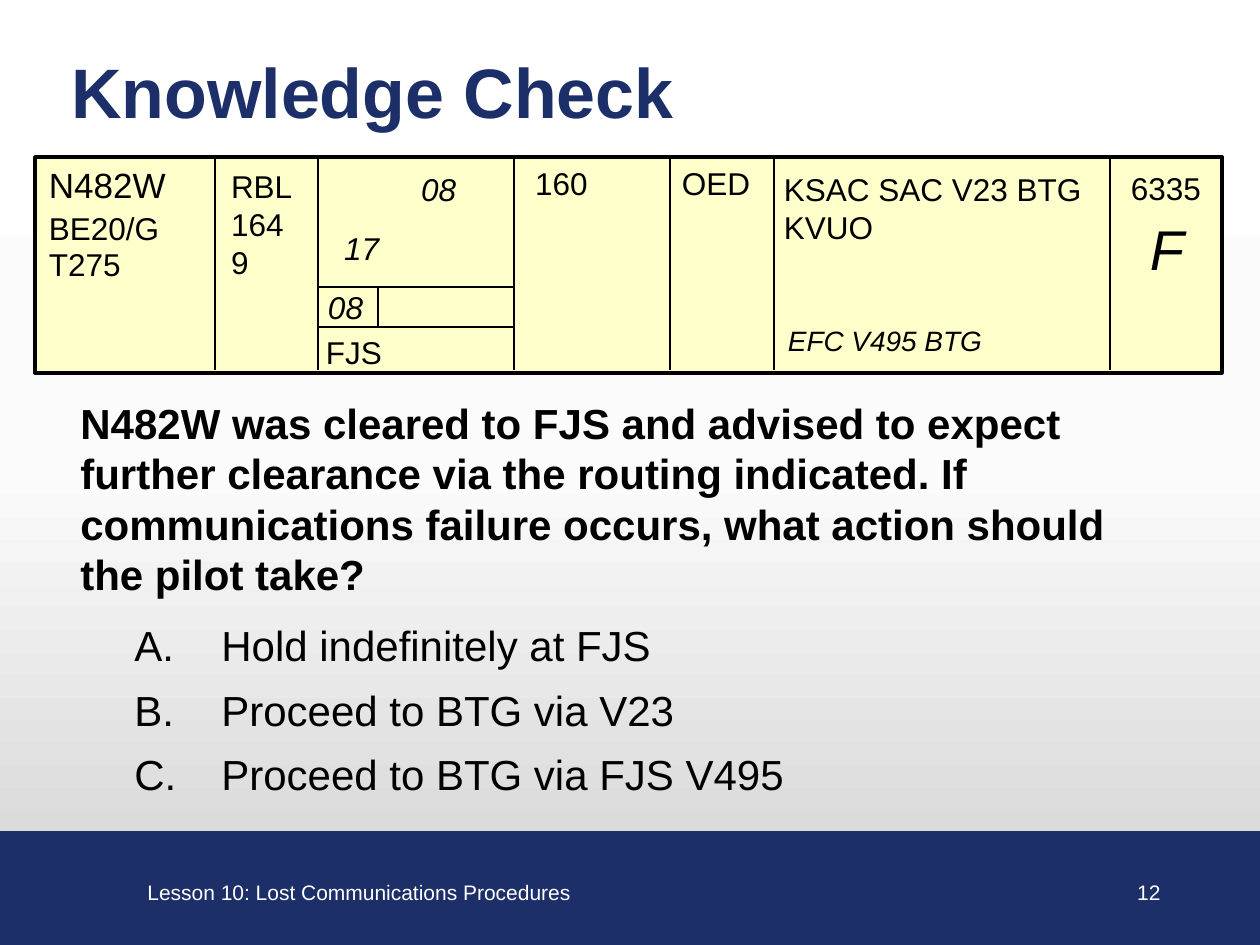
from copy import deepcopy
from dataclasses import dataclass

from lxml import etree
from pptx import Presentation
from pptx import util as u
from pptx.dml.color import RGBColor
from pptx.enum import shapes, text
from pptx.oxml.ns import qn

EMU_PER_PX = 914400 / 126


def px(n):
    return u.Emu(round(n * EMU_PER_PX))


@dataclass(frozen=True)
class Theme:
    font: str = "Arial"
    navy: str = "1D2F68"
    ink: str = "000000"
    white: str = "FFFFFF"
    strip: str = "FFFFCC"
    backdrop: tuple = ((0, "FFFFFF"), (0.5, "FBFBFB"), (1, "D0D0D0"))
    title: int = 40
    mark: int = 32
    body: int = 24
    callsign: int = 20
    entry: int = 18
    note: int = 16
    footer: int = 12


class SlideBuilder:
    def __init__(self, prs, theme):
        self.theme = theme
        self.s = prs.slides.add_slide(prs.slide_layouts[6])

    def background(self):
        fill = self.s.background.fill
        fill.gradient()
        fill.gradient_angle = 270
        first = self.s.element.find(".//" + qn("a:gs"))
        first.addnext(deepcopy(first))
        for stop, (position, color) in zip(fill.gradient_stops, self.theme.backdrop):
            stop.position = position
            stop.color.rgb = RGBColor.from_string(color)

    def rect(self, x, y, w, h, fill, line, weight):
        sp = self.s.shapes.add_shape(
            shapes.MSO_SHAPE.RECTANGLE, px(x), px(y), px(w), px(h))
        sp.shadow.inherit = False
        sp.fill.solid()
        sp.fill.fore_color.rgb = RGBColor.from_string(fill)
        sp.line.color.rgb = RGBColor.from_string(line)
        sp.line.width = u.Pt(weight)

    def rule(self, x1, y1, x2, y2):
        ln = self.s.shapes.add_connector(
            shapes.MSO_CONNECTOR.STRAIGHT, px(x1), px(y1), px(x2), px(y2))
        ln.line.color.rgb = RGBColor.from_string(self.theme.ink)
        ln.line.width = u.Pt(1)
        etree.SubElement(ln.element.spPr, qn("a:effectLst"))

    def box(self, x, y, w, h, inset=True, middle=False):
        tf = self.s.shapes.add_textbox(px(x), px(y), px(w), px(h)).text_frame
        tf.word_wrap = True
        if not inset:
            tf.margin_left = tf.margin_top = tf.margin_right = tf.margin_bottom = 0
        if middle:
            tf.vertical_anchor = text.MSO_ANCHOR.MIDDLE
        return tf

    def para(self, tf, words, size, color=None, bold=False, italic=False,
             align=None, before=None, after=None, spacing=None, lettered=False):
        p = tf.paragraphs[0]
        if p.runs:
            p = tf.add_paragraph()
        p.alignment = align
        p.space_before, p.space_after, p.line_spacing = before, after, spacing
        if lettered:
            pPr = p._p.get_or_add_pPr()
            pPr.set("marL", str(px(141)))
            pPr.set("indent", str(px(-87)))
            etree.SubElement(pPr, qn("a:buFont"), typeface=self.theme.font)
            etree.SubElement(pPr, qn("a:buAutoNum"), type="alphaUcPeriod")
        r = p.add_run()
        r.text = words
        r.font.name = self.theme.font
        r.font.size = u.Pt(size)
        r.font.bold, r.font.italic = bold, italic
        r.font.color.rgb = RGBColor.from_string(color or self.theme.ink)

    def entry(self, x, y, w, h, lines, size=None, **style):
        tf = self.box(x, y, w, h, inset=False)
        for words in lines:
            self.para(tf, words, size or self.theme.entry, **style)


def main():
    prs = Presentation()
    prs.slide_width, prs.slide_height = px(1260), px(945)
    t = Theme()
    b = SlideBuilder(prs, t)
    b.background()

    # Footer band
    b.rect(0, 832, 1260, 113, t.navy, t.navy, 0.75)
    b.para(b.box(135, 873, 470, 38), "Lesson 10: Lost Communications Procedures",
           t.footer, t.white)
    b.para(b.box(1095, 873, 78, 38, middle=True), "12", t.footer, t.white,
           align=text.PP_ALIGN.RIGHT)

    # Flight strip and its dividers
    b.rect(35, 157, 1187, 216, t.strip, t.ink, 2)
    for x in (215, 318, 514, 670, 774, 1110):
        b.rule(x, 159, x, 370)
    for y in (287, 327):
        b.rule(318, y, 513, y)
    b.rule(378, 287, 378, 327)

    # Aircraft identification
    tf = b.box(49, 164, 140, 203, inset=False)
    b.para(tf, "N482W", t.callsign)
    b.para(tf, "BE20/G", t.entry, before=u.Pt(2))
    b.para(tf, "T275", t.entry, spacing=0.95)

    # Strip entries
    b.entry(231, 167, 68, 114, ["RBL", "1649"])
    b.entry(326, 333, 66, 38, ["FJS"])
    b.entry(535, 164, 70, 38, ["160"])
    b.entry(682, 164, 80, 38, ["OED"])
    b.entry(784, 170, 318, 77, ["KSAC SAC V23 BTG", "KVUO"])
    b.entry(1118, 169, 96, 38, ["6335"], align=text.PP_ALIGN.CENTER)
    for x, y, words in ((421, 170, "08"), (344, 229, "17"), (328, 288, "08")):
        b.entry(x, y, 45, 38, [words], italic=True)
    b.entry(788, 324, 300, 34, ["EFC V495 BTG"], t.note, italic=True)
    b.entry(1150, 214, 50, 67, ["F"], t.mark, italic=True)

    # Question and answers
    tf = b.box(68, 391, 1109, 420)
    b.para(tf, "N482W was cleared to FJS and advised to expect further clearance "
               "via the routing indicated. If communications failure occurs, "
               "what action should the pilot take?",
           t.body, bold=True, after=u.Pt(12))
    for answer in ("Hold indefinitely at FJS", "Proceed to BTG via V23",
                   "Proceed to BTG via FJS V495"):
        b.para(tf, answer, t.body, after=u.Pt(8), lettered=True)

    # Title
    b.para(b.box(59, 48, 1168, 84, middle=True), "Knowledge Check", t.title,
           t.navy, bold=True)

    prs.save("out.pptx")


if __name__ == "__main__":
    main()
